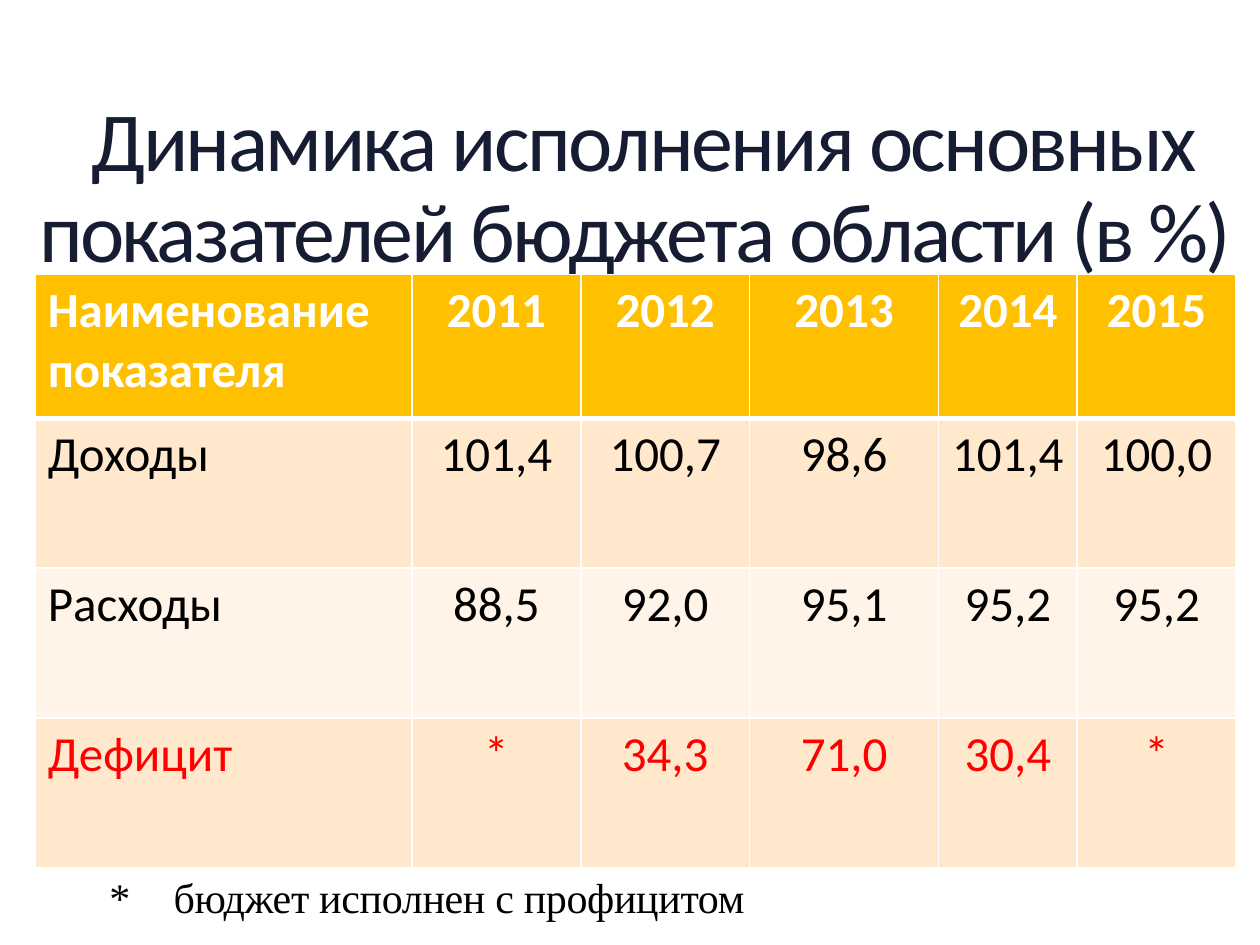
"""Build a slide with a table of regional budget execution by year."""
import lxml.etree
import pptx
import pptx.dml.color
import pptx.enum.text
import pptx.oxml.ns
import pptx.util

Inches, Pt = pptx.util.Inches, pptx.util.Pt
ALIGN = pptx.enum.text.PP_ALIGN
ANCHOR = pptx.enum.text.MSO_ANCHOR
AUTO_SIZE = pptx.enum.text.MSO_AUTO_SIZE

TITLE = "Динамика исполнения основных показателей бюджета области (в %) "
FOOTNOTE = "*\tбюджет исполнен с профицитом"
ROWS = [
    ("Наименование показателя", "2011", "2012", "2013", "2014", "2015"),
    ("Доходы", "101,4", "100,7", "98,6", "101,4", "100,0"),
    ("Расходы", "88,5", "92,0", "95,1", "95,2", "95,2"),
    ("Дефицит", "*", "34,3", "71,0", "30,4", "*"),
]
COLORS = {
    "title": "161D32", "header": "FFC000", "odd": "FFE8CC", "even": "FFF4E7",
    "white": "FFFFFF", "black": "000000", "red": "FF0000",
}
ROW_STYLES = [("header", "white"), ("odd", "black"), ("even", "black"), ("odd", "red")]
COLUMN_WIDTHS = [2.99, 1.34, 1.34, 1.5, 1.1, 1.26]
ROW_HEIGHTS = [1.14, 1.19, 1.19, 1.19]
TITLE_BOX = (0.28, 0.67, 9.65, 1.67)
TABLE_BOX = (0.28, 2.18, 9.53, 4.72)
FOOTNOTE_BOX = (0.28, 6.87, 6.14, 0.5)
TITLE_FRAME = {
    "margin_left": 0, "margin_top": 0, "margin_right": 0, "margin_bottom": 0,
    "word_wrap": True, "auto_size": AUTO_SIZE.NONE, "vertical_anchor": ANCHOR.MIDDLE,
}


def set_values(target, values):
    for name, value in values.items():
        setattr(target, name, value)


def rgb(name):
    return pptx.dml.color.RGBColor.from_string(COLORS[name])


def add_element(parent, tag, **attributes):
    element = lxml.etree.SubElement(parent, pptx.oxml.ns.qn(tag))
    for name, value in attributes.items():
        element.set(name, str(value))
    return element


def write(paragraph, text, color, spacing=0, **font):
    run = paragraph.add_run()
    run.text = text
    set_values(run.font, font)
    run.font.color.rgb = rgb(color)
    if spacing:
        run.font._element.set("spc", str(spacing))


def add_borders(cell, is_header):
    properties = cell._tc.get_or_add_tcPr()
    fill = properties[0]
    for side in "LRTB":
        width = 3 if is_header and side == "B" else 1
        line = add_element(properties, f"a:ln{side}", w=Pt(width))
        add_element(add_element(line, "a:solidFill"), "a:srgbClr", val=COLORS["white"])
    properties.append(fill)


def add_title(slide):
    shape = slide.shapes.title
    set_values(shape, dict(zip(("left", "top", "width", "height"), map(Inches, TITLE_BOX))))
    set_values(shape.text_frame, TITLE_FRAME)
    paragraph = shape.text_frame.paragraphs[0]
    set_values(paragraph, {"alignment": ALIGN.CENTER, "line_spacing": 0.9})
    write(paragraph, TITLE, "title", -150, name="Calibri", size=Pt(48))


def add_budget_table(slide):
    frame = slide.shapes.add_table(len(ROWS), len(COLUMN_WIDTHS), *map(Inches, TABLE_BOX))
    table = frame.table
    for column, width in zip(table.columns, COLUMN_WIDTHS):
        column.width = Inches(width)
    for index, (row, values) in enumerate(zip(table.rows, ROWS)):
        row.height = Inches(ROW_HEIGHTS[index])
        fill, color = ROW_STYLES[index]
        for position, (cell, text) in enumerate(zip(row.cells, values)):
            cell.fill.solid()
            cell.fill.fore_color.rgb = rgb(fill)
            add_borders(cell, index == 0)
            paragraph = cell.text_frame.paragraphs[0]
            paragraph.alignment = ALIGN.CENTER if position else ALIGN.LEFT
            write(paragraph, text, color, name="Calibri", size=Pt(28), bold=index == 0)


def add_footnote(slide):
    text_frame = slide.shapes.add_textbox(*map(Inches, FOOTNOTE_BOX)).text_frame
    set_values(text_frame, {"word_wrap": True, "auto_size": AUTO_SIZE.SHAPE_TO_FIT_TEXT})
    paragraph = text_frame.paragraphs[0]
    paragraph.alignment = ALIGN.JUSTIFY
    properties = paragraph._p.get_or_add_pPr()
    properties.set("marL", "0")
    properties.set("indent", str(Inches(0.49)))
    add_element(add_element(properties, "a:tabLst"), "a:tab", pos=Inches(1), algn="l")
    write(paragraph, FOOTNOTE, "black", -20, name="Times New Roman", size=Pt(24))


def main():
    presentation = pptx.Presentation()
    set_values(presentation, {"slide_width": Inches(10), "slide_height": Inches(7.5)})
    slide = presentation.slides.add_slide(presentation.slide_layouts.get_by_name("Title Only"))
    add_title(slide)
    add_budget_table(slide)
    add_footnote(slide)
    presentation.save("out.pptx")


if __name__ == "__main__":
    main()
